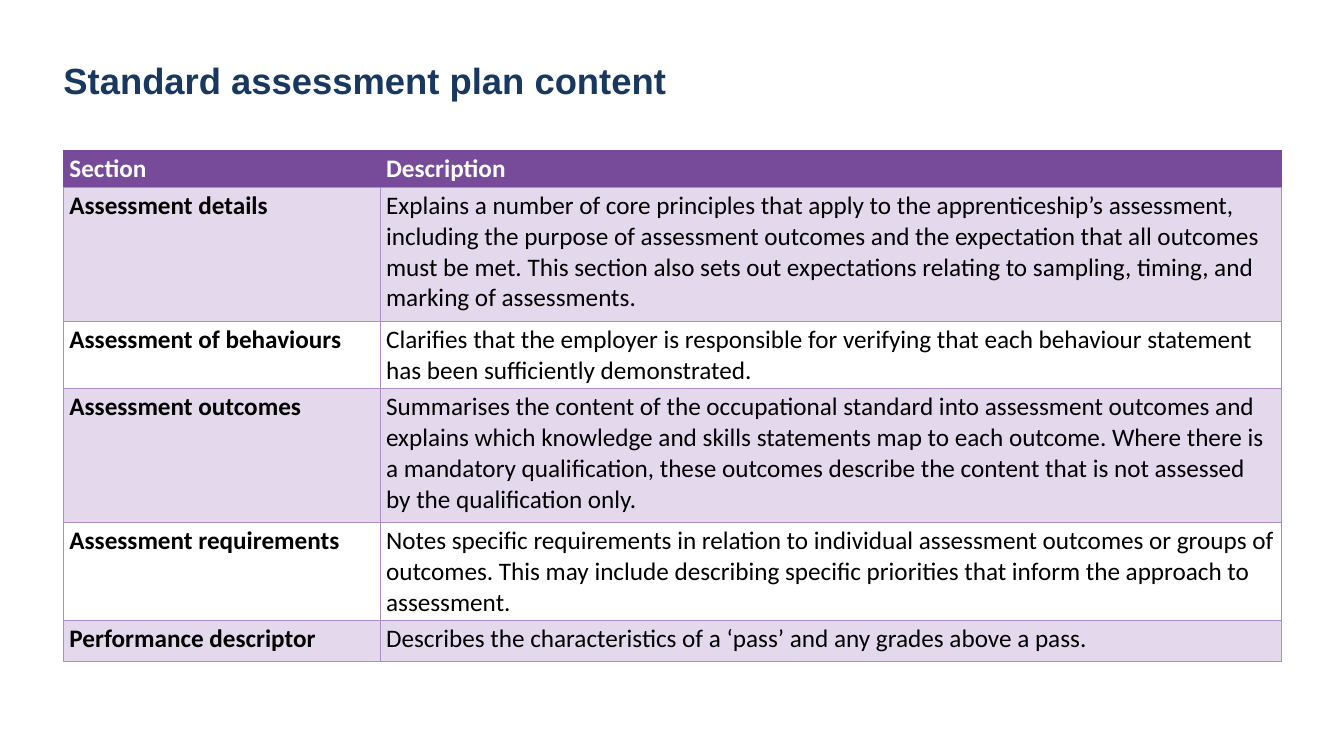
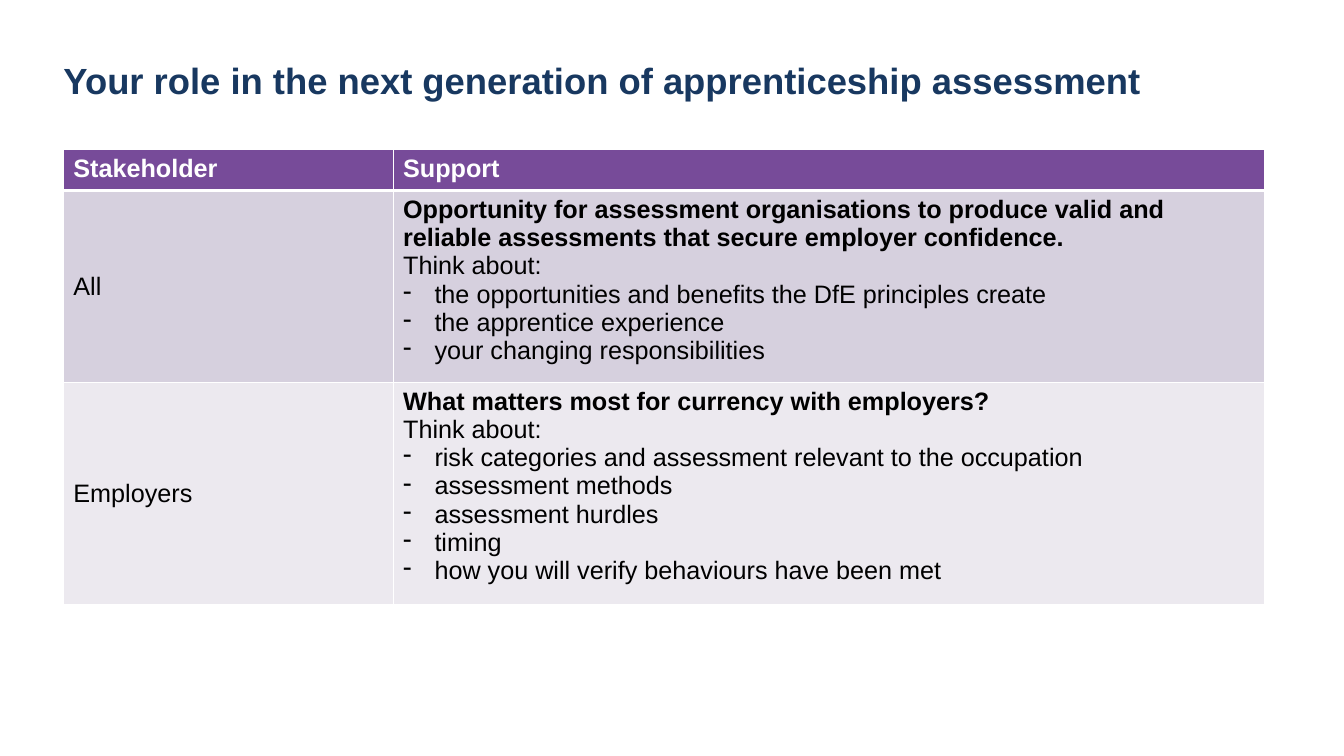
from dataclasses import dataclass

from lxml import etree
from pptx import Presentation
from pptx import util as u
from pptx.dml.color import RGBColor
from pptx.enum import text
from pptx.oxml.ns import qn


@dataclass(frozen=True)
class Theme:
    navy: str = "183860"
    purple: str = "774B99"
    lilac_line: str = "AD8DC7"
    lilac: str = "E3D8EC"
    mauve: str = "D6D0DE"
    pale_mauve: str = "ECE9EF"
    white: str = "FFFFFF"
    black: str = "000000"
    title_font: str = "Arial"
    title_size: int = 26
    table_size: int = 18
    left: float = 1.6
    dash_indent: float = 0.79


THEME = Theme()


@dataclass(frozen=True)
class TableStyle:
    """Lengths are in cm, line widths in points."""
    font: str
    margins: tuple
    bands: tuple
    header_line: tuple
    header_bottom: tuple
    body_line: tuple
    label_bold: bool
    label_anchor: text.MSO_ANCHOR


PLAN_STYLE = TableStyle(
    font="Calibri", margins=(0.15, 0.08), bands=(THEME.lilac, THEME.white),
    header_line=(THEME.purple, 0.5), header_bottom=(THEME.lilac_line, 0.5),
    body_line=(THEME.lilac_line, 0.5),
    label_bold=True, label_anchor=text.MSO_ANCHOR.TOP)
ROLE_STYLE = TableStyle(
    font="Arial", margins=(0.25, 0.13), bands=(THEME.mauve, THEME.pale_mauve),
    header_line=(THEME.white, 1), header_bottom=(THEME.white, 3),
    body_line=(THEME.white, 1),
    label_bold=False, label_anchor=text.MSO_ANCHOR.MIDDLE)

PLAN_ROWS = [
    ("Assessment details", [
        "Explains a number of core principles that apply to the apprenticeship’s "
        "assessment, including the purpose of assessment outcomes and the expectation "
        "that all outcomes must be met. This section also sets out expectations "
        "relating to sampling, timing, and marking of assessments."]),
    ("Assessment of behaviours", [
        "Clarifies that the employer is responsible for verifying that each behaviour "
        "statement has been sufficiently demonstrated."]),
    ("Assessment outcomes", [
        "Summarises the content of the occupational standard into assessment outcomes "
        "and explains which knowledge and skills statements map to each outcome. Where "
        "there is a mandatory qualification, these outcomes describe the content that "
        "is not assessed by the qualification only."]),
    ("Assessment requirements", [
        "Notes specific requirements in relation to individual assessment outcomes or "
        "groups of outcomes. This may include describing specific priorities that "
        "inform the approach to assessment."]),
    ("Performance descriptor", [
        "Describes the characteristics of a ‘pass’ and any grades above a pass."]),
]


def support(lead, points):
    """Paragraphs of a support cell: bold lead, prompt, dashed points."""
    return [(lead, "bold"), "Think about:", *((point, "dash") for point in points)]


ROLE_ROWS = [
    ("All", support(
        "Opportunity for assessment organisations to produce valid and reliable "
        "assessments that secure employer confidence.",
        ["the opportunities and benefits the DfE principles create",
         "the apprentice experience",
         "your changing responsibilities"])),
    ("Employers", support(
        "What matters most for currency with employers?",
        ["risk categories and assessment relevant to the occupation",
         "assessment methods",
         "assessment hurdles",
         "timing",
         "how you will verify behaviours have been met"])),
]


def set_all(target, values):
    for name, value in values.items():
        setattr(target, name, value)


def add_span(para, words, font, size, color, bold):
    span = para.add_run()
    span.text = words
    set_all(span.font, {"name": font, "size": u.Pt(size), "bold": bold})
    span.font.color.rgb = RGBColor.from_string(color)


def add_title(page, words):
    box = page.shapes.add_textbox(u.Cm(THEME.left), u.Cm(1.37), u.Cm(30.58), u.Cm(2))
    set_all(box.text_frame, {
        "word_wrap": True, "margin_left": 0, "margin_right": 0,
        "margin_top": u.Cm(0.1), "margin_bottom": 0})
    add_span(box.text_frame.paragraphs[0], words, THEME.title_font,
             THEME.title_size, THEME.navy, True)


def set_dash(para):
    props = para._p.get_or_add_pPr()
    indent = u.Cm(THEME.dash_indent)
    props.set("marL", str(indent))
    props.set("indent", str(-indent))
    etree.SubElement(props, qn("a:buChar")).set("char", "-")


def set_borders(cell, lines):
    """Draw the sides L, R, T and B, each given as (colour, points)."""
    props = cell._tc.get_or_add_tcPr()
    for place, side in enumerate("LRTB"):
        color, width = lines[side]
        line = etree.Element(qn(f"a:ln{side}"), w=str(u.Pt(width)))
        fill = etree.SubElement(line, qn("a:solidFill"))
        etree.SubElement(fill, qn("a:srgbClr")).set("val", color)
        props.insert(place, line)


def fill_cell(cell, style, paragraphs, fill, color, bold=False,
              anchor=text.MSO_ANCHOR.TOP):
    """Write paragraphs, each a string or a (string, "bold" or "dash") pair."""
    side, end = map(u.Cm, style.margins)
    set_all(cell, {"margin_left": side, "margin_right": side, "margin_top": end,
                   "margin_bottom": end, "vertical_anchor": anchor})
    cell.fill.solid()
    cell.fill.fore_color.rgb = RGBColor.from_string(fill)
    for index, item in enumerate(paragraphs):
        words, kind = (item, "plain") if isinstance(item, str) else item
        frame = cell.text_frame
        para = frame.add_paragraph() if index else frame.paragraphs[0]
        if kind == "dash":
            set_dash(para)
        add_span(para, words, style.font, THEME.table_size, color,
                 bold or kind == "bold")


def add_grid(page, style, top, widths, heights, headings, rows):
    frame = page.shapes.add_table(
        len(heights), len(widths), u.Cm(THEME.left), u.Cm(top),
        u.Cm(sum(widths)), u.Cm(sum(heights)))
    table = frame.table
    for column, width in zip(table.columns, widths):
        column.width = u.Cm(width)
    for row, height in zip(table.rows, heights):
        row.height = u.Cm(height)

    header_lines = {**dict.fromkeys("LRT", style.header_line), "B": style.header_bottom}
    for column, heading in enumerate(headings):
        cell = table.cell(0, column)
        fill_cell(cell, style, [heading], THEME.purple, THEME.white, bold=True)
        set_borders(cell, header_lines)

    for index, (label, description) in enumerate(rows):
        band = style.bands[index % 2]
        name_cell, detail_cell = table.cell(index + 1, 0), table.cell(index + 1, 1)
        fill_cell(name_cell, style, [label], band, THEME.black,
                  style.label_bold, style.label_anchor)
        fill_cell(detail_cell, style, description, band, THEME.black)
        lines = dict.fromkeys("LRTB", style.body_line)
        if index == 0:
            lines["T"] = style.header_bottom
        for cell in (name_cell, detail_cell):
            set_borders(cell, lines)


def add_page(deck, title):
    page = deck.slides.add_slide(deck.slide_layouts[6])
    add_title(page, title)
    return page


def main():
    deck = Presentation()
    set_all(deck, {"slide_width": u.Cm(33.87), "slide_height": u.Cm(19.05)})

    page = add_page(deck, "Standard assessment plan content")
    add_grid(page, PLAN_STYLE, 3.8, (7.98, 22.71), (0.92, 3.37, 1.7, 3.37, 2.48, 1.02),
             ("Section", "Description"), PLAN_ROWS)

    page = add_page(deck, "Your role in the next generation of apprenticeship assessment")
    add_grid(page, ROLE_STYLE, 3.76, (8.31, 21.95), (1.04, 4.5, 5.2),
             ("Stakeholder", "Support"), ROLE_ROWS)

    deck.save("out.pptx")


if __name__ == "__main__":
    main()
